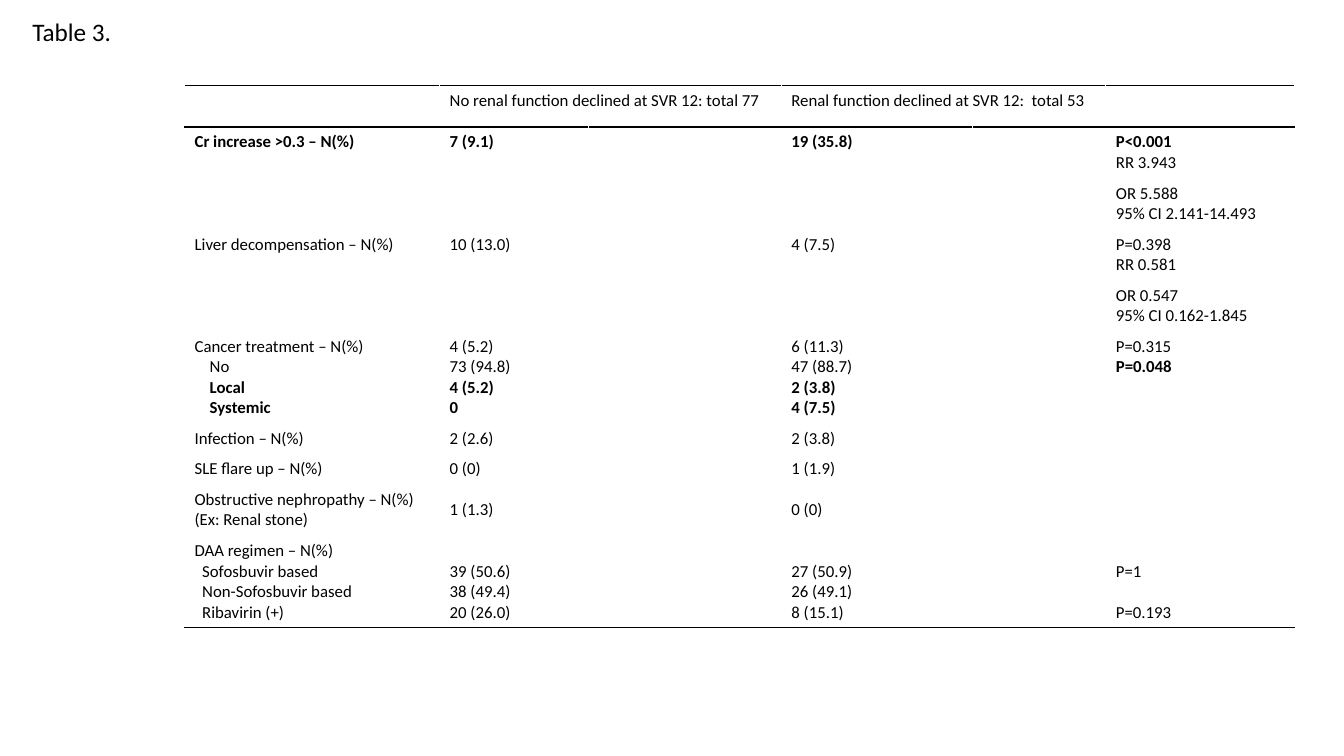
import pptx
import pptx.util
import pptx.dml.color
import pptx.enum.text
import pptx.oxml.ns
import lxml.etree

BLACK = pptx.dml.color.RGBColor(0, 0, 0)
WHITE = pptx.dml.color.RGBColor(255, 255, 255)
TOP = pptx.enum.text.MSO_ANCHOR.TOP
MIDDLE = pptx.enum.text.MSO_ANCHOR.MIDDLE
BOTTOM = pptx.enum.text.MSO_ANCHOR.BOTTOM
LEFT = pptx.enum.text.PP_ALIGN.LEFT

# Each line may start with marks: * bold, _ one indent step, ^ one line skipped.
HEAD = ["", "No renal function declined at SVR 12: total 77",
        "Renal function declined at SVR 12:  total 53", ""]
BODY = [
    ["*Cr increase >0.3 – N(%)", "*7 (9.1)", "*19 (35.8)", "*P<0.001\nRR 3.943"],
    ["", "", "", "OR 5.588\n95% CI 2.141-14.493"],
    ["Liver decompensation – N(%)", "10 (13.0)", "4 (7.5)", "P=0.398\nRR 0.581"],
    ["", "", "", "OR 0.547\n95% CI 0.162-1.845"],
    ["Cancer treatment – N(%)\n__No\n*__Local\n*__Systemic",
     "4 (5.2)\n73 (94.8)\n*4 (5.2)\n*0",
     "6 (11.3)\n47 (88.7)\n*2 (3.8)\n*4 (7.5)",
     "P=0.315\n*P=0.048"],
    ["Infection – N(%)", "2 (2.6)", "2 (3.8)", ""],
    ["SLE flare up – N(%)", "0 (0)", "1 (1.9)", ""],
    ["Obstructive nephropathy – N(%)\n(Ex: Renal stone)", "1 (1.3)", "0 (0)", ""],
    ["DAA regimen – N(%)\n_Sofosbuvir based\n_Non-Sofosbuvir based\n_Ribavirin (+)",
     "39 (50.6)\n38 (49.4)\n20 (26.0)",
     "27 (50.9)\n26 (49.1)\n8 (15.1)",
     "P=1\n^P=0.193"],
]
WIDTHS = [18.98, 11.1, 14.33, 14.25, 9.9, 14.03]
HEIGHTS = [5.47, 6.7, 6.7, 6.7, 6.7, 12.1, 4, 4, 6.7, 12.1]
PLACES = [0, 1, 3, 5]


class Deck:
    """Style and current slide; lengths are percent of the slide's size."""

    font = "Calibri"
    size = 12
    step = pptx.util.Inches(0.075)
    skip = pptx.util.Pt(14.65)

    def __init__(self):
        self.show = pptx.Presentation()
        self.show.slide_width = pptx.util.Inches(13.33)
        self.show.slide_height = pptx.util.Inches(7.5)
        self.slide = self.show.slides.add_slide(self.show.slide_layouts[5])

    def wide(self, share):
        return int(self.show.slide_width * share / 100)

    def high(self, share):
        return int(self.show.slide_height * share / 100)

    def style(self, para, size, bold=False):
        for run in para.runs:
            run.font.name = self.font
            run.font.size = pptx.util.Pt(size)
            run.font.bold = bold
            run.font.color.rgb = BLACK

    def title(self, text, left, top, width, height):
        box = self.slide.shapes.title
        box.left, box.top = self.wide(left), self.high(top)
        box.width, box.height = self.wide(width), self.high(height)
        frame = box.text_frame
        frame.text = text
        frame.vertical_anchor = TOP
        frame.auto_size = pptx.enum.text.MSO_AUTO_SIZE.NONE
        frame.paragraphs[0].alignment = LEFT
        frame.paragraphs[0].line_spacing = 1.0
        self.style(frame.paragraphs[0], 18)

    def table(self, left, top, widths, heights):
        grid = self.slide.shapes.add_table(
            len(heights), len(widths), self.wide(left), self.high(top),
            self.wide(sum(widths)), self.high(sum(heights))).table
        grid.first_row = grid.horz_banding = False
        for col, width in zip(grid.columns, widths):
            col.width = self.wide(width)
        for row, height in zip(grid.rows, heights):
            row.height = self.high(height)
        for cell in grid.iter_cells():
            cell.fill.solid()
            cell.fill.fore_color.rgb = WHITE
            self.blank(cell)
        return grid

    def blank(self, cell):
        """Keep an empty cell from growing its row."""
        para = cell.text_frame.paragraphs[0]._p
        end = lxml.etree.SubElement(para, pptx.oxml.ns.qn("a:endParaRPr"))
        end.set("sz", str(self.size * 100))

    def rule(self, cell, sides):
        """Draw 1 pt lines on the sides named, T before B."""
        props = cell._tc.get_or_add_tcPr()
        for place, side in enumerate(sides):
            line = lxml.etree.Element(pptx.oxml.ns.qn("a:ln" + side), w="12700")
            fill = lxml.etree.SubElement(line, pptx.oxml.ns.qn("a:solidFill"))
            lxml.etree.SubElement(fill, pptx.oxml.ns.qn("a:srgbClr"), val=str(BLACK))
            props.insert(place, line)

    def fill(self, cell, text, anchor=TOP):
        """Write marked lines into a cell."""
        cell.vertical_anchor = anchor
        lines = text.split("\n")
        marks = [line[:len(line) - len(line.lstrip("*_^"))] for line in lines]
        cell.text_frame.text = "\n".join(line.lstrip("*_^") for line in lines)
        for para, mark in zip(cell.text_frame.paragraphs, marks):
            if "_" in mark:
                para._p.get_or_add_pPr().set("marL", str(self.step * mark.count("_")))
            if "^" in mark:
                para.space_before = self.skip
            self.style(para, self.size, "*" in mark)


def main():
    deck = Deck()
    deck.title("Table 3.", 1.65, 1.47, 13.7, 5.4)
    grid = deck.table(13.73, 11.33, WIDTHS, HEIGHTS)
    last = len(BODY)
    for col in (1, 3):
        grid.cell(0, col).merge(grid.cell(0, col + 1))
    for row, texts in enumerate([HEAD] + BODY):
        for col, text in zip(PLACES, texts):
            if not text:
                continue
            cell = grid.cell(row, col)
            anchor = TOP
            if row == last:
                anchor = BOTTOM
            elif row in (6, 7, 8) and col:
                anchor = MIDDLE
                cell.margin_top = cell.margin_bottom = 0
            deck.fill(cell, text, anchor)
    for col in range(len(WIDTHS)):
        for row, sides in ((0, "TB"), (1, "T"), (last, "B")):
            deck.rule(grid.cell(row, col), sides)
    deck.show.save("out.pptx")


if __name__ == "__main__":
    main()
